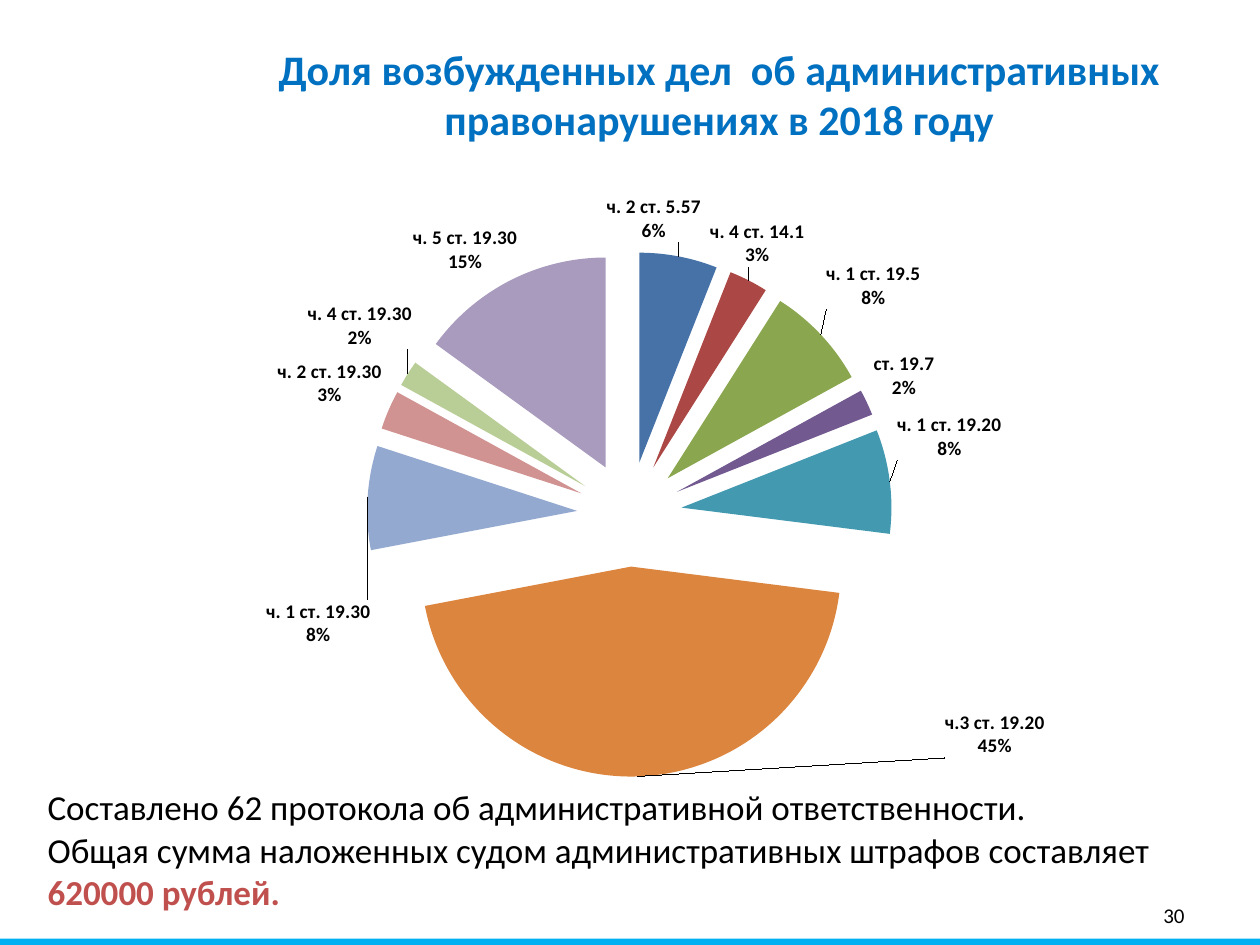
"""Build the slide on the share of administrative offence cases in 2018."""
from dataclasses import dataclass
from typing import Optional

from lxml import etree
from pptx import Presentation
from pptx.chart.data import CategoryChartData
from pptx.dml.color import RGBColor
from pptx.enum.chart import XL_CHART_TYPE
from pptx.enum.shapes import MSO_SHAPE
from pptx.enum.text import MSO_ANCHOR, PP_ALIGN
from pptx.oxml import parse_xml
from pptx.oxml.ns import nsdecls, qn
from pptx.util import Cm, Pt

PIE = XL_CHART_TYPE.PIE
RECT = MSO_SHAPE.RECTANGLE
TOP, MIDDLE = MSO_ANCHOR.TOP, MSO_ANCHOR.MIDDLE
LEFT, CENTER, RIGHT = PP_ALIGN.LEFT, PP_ALIGN.CENTER, PP_ALIGN.RIGHT

FONT = "Calibri"
BLACK = RGBColor(0, 0, 0)
TITLE_BLUE = RGBColor(0x00, 0x70, 0xC0)
BAR_BLUE = RGBColor(0x00, 0xB0, 0xF0)
SUM_RED = RGBColor(0xC0, 0x50, 0x4D)
EXPLOSION = 25


@dataclass
class Slice:
    article: str
    share: int
    color: RGBColor
    shift: Optional[tuple[float, float]] = None


SLICES = [
    Slice("ч. 2 ст. 5.57", 6, RGBColor(0x46, 0x72, 0xA8), (-0.07, -0.01)),
    Slice("ч. 4 ст. 14.1", 3, RGBColor(0xAB, 0x47, 0x44), (-0.04, -0.01)),
    Slice("ч. 1 ст. 19.5", 8, RGBColor(0x8A, 0xA6, 0x4F), (0, -0.03)),
    Slice("ст. 19.7", 2, RGBColor(0x72, 0x59, 0x90)),
    Slice("ч. 1 ст. 19.20", 8, RGBColor(0x42, 0x99, 0xB0), (0, -0.03)),
    Slice("ч.3 ст. 19.20", 45, RGBColor(0xDC, 0x85, 0x3E), (0.34, -0.11)),
    Slice("ч. 1 ст. 19.30", 8, RGBColor(0x93, 0xA9, 0xCF), (0.01, 0.19)),
    Slice("ч. 2 ст. 19.30", 3, RGBColor(0xD0, 0x93, 0x92)),
    Slice("ч. 4 ст. 19.30", 2, RGBColor(0xB9, 0xCD, 0x96), (0.01, -0.03)),
    Slice("ч. 5 ст. 19.30", 15, RGBColor(0xA9, 0x9B, 0xBD), (0.01, 0)),
]

LABEL_SHOW = (
    '<c:dLblPos val="outEnd"/><c:showLegendKey val="0"/><c:showVal val="0"/>'
    '<c:showCatName val="1"/><c:showSerName val="0"/><c:showPercent val="1"/>'
    '<c:showBubbleSize val="0"/><c:separator>\n</c:separator>'
)
LABEL_STYLE = (
    '<c:numFmt formatCode="0%" sourceLinked="0"/><c:spPr><a:noFill/></c:spPr>'
    '<c:txPr><a:bodyPr/><a:p><a:pPr><a:defRPr sz="1100" b="1"><a:solidFill>'
    f'<a:srgbClr val="{BLACK}"/></a:solidFill><a:latin typeface="{FONT}"/>'
    '</a:defRPr></a:pPr><a:endParaRPr lang="ru-RU"/></a:p></c:txPr>'
)


def style_text(tf, size: int, color: RGBColor, align, anchor=TOP, bold=False) -> None:
    tf.word_wrap = True
    tf.vertical_anchor = anchor
    for p in tf.paragraphs:
        p.alignment = align
        p.font.name, p.font.size, p.font.bold = FONT, Pt(size), bold
        p.font.color.rgb = color


def label_xml(slices: list[Slice]) -> etree.ElementBase:
    moved = "".join(
        f'<c:dLbl><c:idx val="{i}"/><c:layout><c:manualLayout>'
        f'<c:x val="{s.shift[0]}"/><c:y val="{s.shift[1]}"/>'
        f'</c:manualLayout></c:layout>{LABEL_STYLE}{LABEL_SHOW}</c:dLbl>'
        for i, s in enumerate(slices) if s.shift
    )
    return parse_xml(
        f'<c:dLbls {nsdecls("c", "a")}>{moved}{LABEL_STYLE}{LABEL_SHOW}'
        '<c:showLeaderLines val="1"/></c:dLbls>'
    )


def set_plot_layout(chart, x: float, y: float, w: float, h: float) -> None:
    area = chart.element.find(f".//{qn('c:plotArea')}")
    old = area.find(qn("c:layout"))
    if old is not None:
        area.remove(old)
    area.insert(0, parse_xml(
        f'<c:layout {nsdecls("c")}><c:manualLayout><c:layoutTarget val="inner"/>'
        '<c:xMode val="edge"/><c:yMode val="edge"/>'
        f'<c:x val="{x}"/><c:y val="{y}"/><c:w val="{w}"/><c:h val="{h}"/>'
        '</c:manualLayout></c:layout>'
    ))


def add_pie(s, slices: list[Slice]) -> None:
    data = CategoryChartData()
    data.categories = [sl.article for sl in slices]
    data.add_series("Series 1", [sl.share for sl in slices])
    chart = s.shapes.add_chart(PIE, Cm(2.11), Cm(3.73), Cm(21.16), Cm(13.41), data).chart
    chart.has_legend = chart.has_title = False
    chart.font.name, chart.font.size = FONT, Pt(10)
    chart.font.color.rgb = BLACK
    plot = chart.plots[0]
    plot.vary_by_categories = True
    series = plot.series[0]
    for i, sl in enumerate(slices):
        fill = series.points[i].format.fill
        fill.solid()
        fill.fore_color.rgb = sl.color
    ser = series._element
    first_point = ser.find(qn("c:dPt"))
    first_point.addprevious(parse_xml(f'<c:explosion {nsdecls("c")} val="{EXPLOSION}"/>'))
    for point in ser.findall(qn("c:dPt")):
        point.find(qn("c:spPr")).addprevious(
            parse_xml(f'<c:explosion {nsdecls("c")} val="{EXPLOSION}"/>'))
    ser.find(qn("c:cat")).addprevious(label_xml(slices))
    set_plot_layout(chart, 0.25, 0.1, 0.5, 0.79)


def main() -> None:
    prs = Presentation()
    prs.slide_width, prs.slide_height = Cm(25.4), Cm(19.05)
    s = prs.slides.add_slide(prs.slide_layouts[5])

    bar = s.shapes.add_shape(RECT, 0, Cm(18.92), prs.slide_width, Cm(0.13))
    bar.shadow.inherit = False
    bar.fill.solid()
    bar.fill.fore_color.rgb = BAR_BLUE
    bar.line.fill.background()

    title = s.shapes.title
    title.left, title.top, title.width, title.height = Cm(4.7), Cm(0.74), Cm(19.6), Cm(2.31)
    title.text_frame.text = "Доля возбужденных дел  об административных правонарушениях в 2018 году"
    style_text(title.text_frame, 24, TITLE_BLUE, CENTER, bold=True)

    add_pie(s, SLICES)

    tf = s.shapes.add_textbox(Cm(0.71), Cm(15.72), Cm(24.46), Cm(2.82)).text_frame
    tf.text = "Составлено 62 протокола об административной ответственности."
    p = tf.add_paragraph()
    p.add_run().text = "Общая сумма наложенных судом административных штрафов составляет "
    r = p.add_run()
    r.text = "620000 рублей."
    r.font.bold = True
    r.font.color.rgb = SUM_RED
    style_text(tf, 20, BLACK, LEFT)

    number = s.shapes.add_textbox(Cm(18.21), Cm(17.93), Cm(5.92), Cm(1.02)).text_frame
    number.text = "30"
    style_text(number, 12, BLACK, RIGHT, MIDDLE)

    prs.save("out.pptx")


if __name__ == "__main__":
    main()
